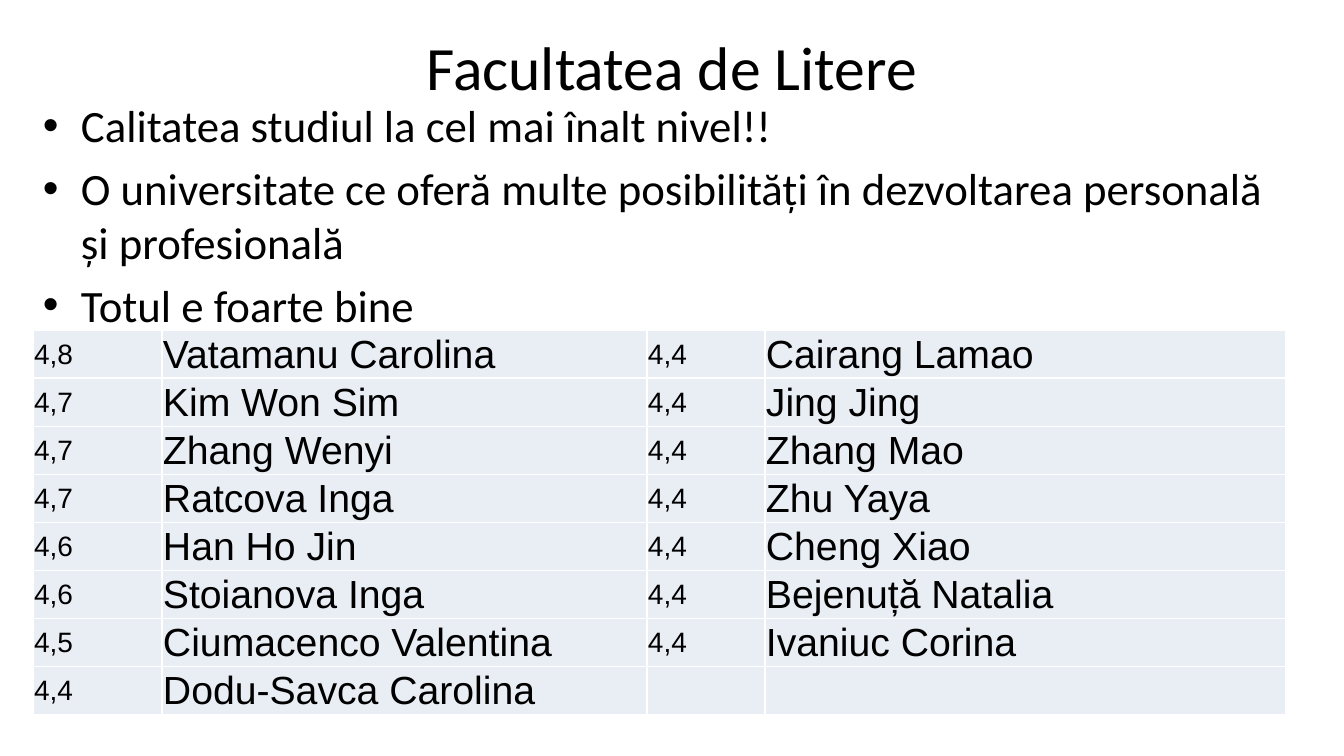
from dataclasses import dataclass

from lxml.etree import SubElement
from pptx import Presentation
from pptx.dml.color import RGBColor as Color
from pptx.enum.text import MSO_ANCHOR as Anchor, PP_ALIGN as Align
from pptx.oxml.ns import qn
from pptx.util import Pt

TITLE = "Facultatea de Litere"
BULLETS = [
    "Calitatea studiul la cel mai înalt nivel!!",
    "O universitate ce oferă multe posibilități în dezvoltarea personală și profesională",
    "Totul e foarte bine",
]
RATINGS = [
    ("4,8", "Vatamanu Carolina", "4,4", "Cairang Lamao"),
    ("4,7", "Kim Won Sim", "4,4", "Jing Jing"),
    ("4,7", "Zhang Wenyi", "4,4", "Zhang Mao"),
    ("4,7", "Ratcova Inga", "4,4", "Zhu Yaya"),
    ("4,6", "Han Ho Jin", "4,4", "Cheng Xiao"),
    ("4,6", "Stoianova Inga", "4,4", "Bejenuță Natalia"),
    ("4,5", "Ciumacenco Valentina", "4,4", "Ivaniuc Corina"),
    ("4,4", "Dodu-Savca Carolina", "", ""),
]
COLUMN_WIDTHS = [129, 485, 118, 521]
ROW_HEIGHT = 44
INDENT = 38


@dataclass(frozen=True)
class Theme:
    ink: str = "000000"
    cell: str = "E9EDF4"
    border: str = "FFFFFF"
    heading_font: str = "Calibri"
    table_font: str = "Arial"
    title: int = 44
    body: int = 32
    name: int = 28
    score: int = 20


THEME = Theme()


def px(length):
    return round(length * 914400 / 100.8)


def write(frame, lines, *, size, font, align=Align.LEFT, anchor=Anchor.TOP,
          bullet=None, gap=0):
    frame.word_wrap = True
    frame.vertical_anchor = anchor
    for index, line in enumerate(lines):
        paragraph = frame.add_paragraph() if index else frame.paragraphs[0]
        paragraph.alignment = align
        if index:
            paragraph.space_before = Pt(gap)
        if bullet:
            properties = paragraph._p.get_or_add_pPr()
            properties.set("marL", str(px(INDENT)))
            properties.set("indent", str(-px(INDENT)))
            SubElement(properties, qn("a:buFont"), typeface="Arial")
            SubElement(properties, qn("a:buChar"), char=bullet)
        run = paragraph.add_run()
        run.text = line
        run.font.size = Pt(size)
        run.font.name = font
        run.font.color.rgb = Color.from_string(THEME.ink)


def add_text(slide, box, lines, **style):
    shape = slide.shapes.add_textbox(*map(px, box))
    write(shape.text_frame, lines, **style)


def style_cell(cell):
    properties = cell._tc.get_or_add_tcPr()
    for side in ("lnL", "lnR", "lnT", "lnB"):
        line = SubElement(properties, qn(f"a:{side}"), w=str(Pt(1)))
        fill = SubElement(line, qn("a:solidFill"))
        SubElement(fill, qn("a:srgbClr"), val=THEME.border)
    cell.fill.solid()
    cell.fill.fore_color.rgb = Color.from_string(THEME.cell)
    cell.margin_left = cell.margin_right = cell.margin_top = px(1)
    cell.margin_bottom = 0
    cell.vertical_anchor = Anchor.MIDDLE


def add_ratings(slide, left, top):
    width, height = sum(COLUMN_WIDTHS), ROW_HEIGHT * len(RATINGS)
    table = slide.shapes.add_table(
        len(RATINGS), len(COLUMN_WIDTHS), *map(px, (left, top, width, height))
    ).table
    table.first_row = table.horz_banding = False
    for column, column_width in zip(table.columns, COLUMN_WIDTHS):
        column.width = px(column_width)
    for row_index, row in enumerate(RATINGS):
        table.rows[row_index].height = px(ROW_HEIGHT)
        for column_index, value in enumerate(row):
            cell = table.cell(row_index, column_index)
            style_cell(cell)
            if value:
                size = THEME.name if column_index % 2 else THEME.score
                write(cell.text_frame, [value], size=size,
                      font=THEME.table_font, anchor=Anchor.MIDDLE)


def main():
    presentation = Presentation()
    presentation.slide_width, presentation.slide_height = px(1344), px(756)
    slide = presentation.slides.add_slide(presentation.slide_layouts[6])
    add_text(slide, (67, 30, 1210, 71), [TITLE], size=THEME.title,
             font=THEME.heading_font, align=Align.CENTER, anchor=Anchor.MIDDLE)
    add_text(slide, (33, 93, 1268, 622), BULLETS, size=THEME.body,
             font=THEME.heading_font, bullet="•", gap=6.4)
    add_ratings(slide, 33, 330)
    presentation.save("out.pptx")


if __name__ == "__main__":
    main()
